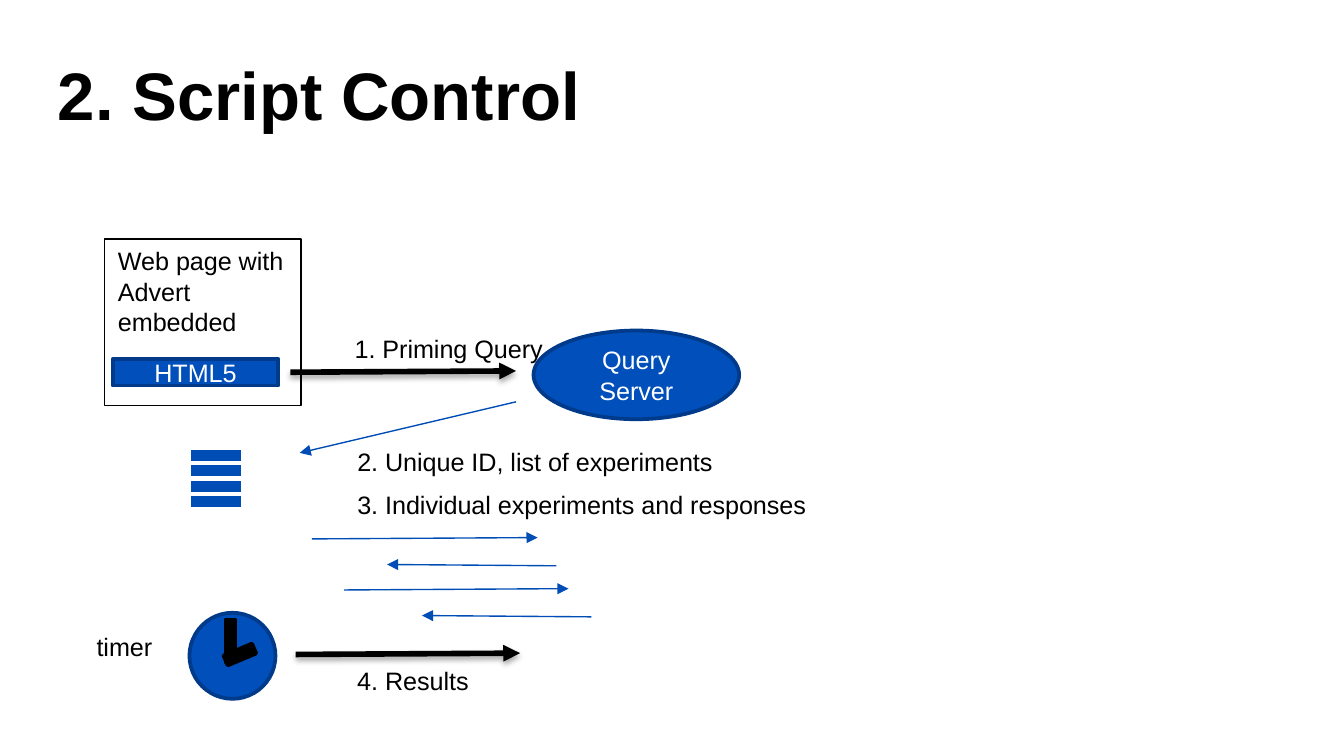
from lxml import etree
from pptx import Presentation
from pptx.dml.color import RGBColor
from pptx.enum.shapes import MSO_CONNECTOR, MSO_SHAPE
from pptx.enum.text import MSO_ANCHOR, MSO_AUTO_SIZE, PP_ALIGN
from pptx.oxml.ns import qn
from pptx.util import Inches, Pt

RECT, OVAL = MSO_SHAPE.RECTANGLE, MSO_SHAPE.OVAL
STRAIGHT = MSO_CONNECTOR.STRAIGHT
TOP, MIDDLE = MSO_ANCHOR.TOP, MSO_ANCHOR.MIDDLE
LEFT, CENTER = PP_ALIGN.LEFT, PP_ALIGN.CENTER
GROW = MSO_AUTO_SIZE.SHAPE_TO_FIT_TEXT
BLACK, WHITE, BLUE, NAVY, INK = "000000", "FFFFFF", "004FBA", "003A8A", "004DB6"


def color(code):
    return RGBColor.from_string(code)


def write(frame, lines, code=BLACK, size=13.5, bold=False, align=LEFT):
    for i, line in enumerate(lines):
        para = frame.add_paragraph() if i else frame.paragraphs[0]
        para.alignment = align
        run = para.add_run()
        run.text = line
        run.font.name = "Arial"
        run.font.size = Pt(size)
        run.font.bold = bold
        run.font.color.rgb = color(code)


deck = Presentation()
deck.slide_width = Inches(10)
deck.slide_height = Inches(10) * 9 // 16
slide = deck.slides.add_slide(deck.slide_layouts[6])
shapes = slide.shapes

title = shapes.add_textbox(Inches(0.43), Inches(0.23), Inches(9.13), Inches(0.94))
frame = title.text_frame
frame.word_wrap = True
frame.vertical_anchor = MIDDLE
frame.margin_left = frame.margin_right = frame.margin_top = frame.margin_bottom = 0
write(frame, ["2. Script Control"], size=36, bold=True)

nodes = [
    (RECT, 0.78, 1.78, 1.46, 1.24, None, BLACK, 0.75, 0, ["Web page with Advert embedded"]),
    (RECT, 0.84, 2.67, 1.23, 0.2, BLUE, NAVY, 2, 0, ["HTML5"]),
    (OVAL, 3.97, 2.46, 1.53, 0.66, BLUE, NAVY, 2, 0, ["Query", "Server"]),
    (OVAL, 1.41, 4.56, 0.64, 0.64, BLUE, NAVY, 2, 0, []),
    (RECT, 1.68, 4.61, 0.07, 0.32, BLACK, BLACK, 2, 0, []),
    (RECT, 1.67, 4.83, 0.23, 0.08, BLACK, BLACK, 2, 337.3, []),
]
for kind, x, y, w, h, fill, edge, width, turn, lines in nodes:
    node = shapes.add_shape(kind, Inches(x), Inches(y), Inches(w), Inches(h))
    node.shadow.inherit = False
    node.rotation = turn
    node.line.color.rgb = color(edge)
    node.line.width = Pt(width)
    node.text_frame.word_wrap = True
    if fill:
        node.fill.solid()
        node.fill.fore_color.rgb = color(fill)
        node.text_frame.vertical_anchor = MIDDLE
        write(node.text_frame, lines, WHITE, align=CENTER)
    else:
        node.fill.background()
        node.text_frame.vertical_anchor = TOP
        node.text_frame.auto_size = GROW
        write(node.text_frame, lines)

labels = [
    (2.54, 2.43, 1.62, "1. Priming Query"),
    (2.56, 3.27, 2.88, "2. Unique ID, list of experiments"),
    (2.56, 3.59, 3.59, "3. Individual experiments and responses"),
    (0.62, 4.65, 0.62, "timer"),
    (2.56, 4.9, 1.04, "4. Results"),
]
for x, y, w, text in labels:
    label = shapes.add_textbox(Inches(x), Inches(y), Inches(w), Inches(0.33))
    label.text_frame.word_wrap = False
    label.text_frame.auto_size = GROW
    write(label.text_frame, [text])

bars = shapes.add_group_shape().shapes
links = [
    (shapes, 2.16, 2.77, 3.84, 2.76, BLACK, 3),
    (shapes, 3.84, 2.99, 2.23, 3.37, INK, 0.75),
    (shapes, 2.32, 4.01, 4, 4, INK, 0.75),
    (shapes, 2.56, 4.39, 4.23, 4.38, INK, 0.75),
    (shapes, 4.14, 4.21, 2.88, 4.2, INK, 0.75),
    (shapes, 4.4, 4.59, 3.14, 4.58, INK, 0.75),
    (shapes, 2.2, 4.87, 3.87, 4.86, BLACK, 3),
]
links += [(bars, 1.42, y, 1.79, y, INK, 6) for y in (3.39, 3.5, 3.62, 3.73)]
for owner, x1, y1, x2, y2, code, width in links:
    link = owner.add_connector(STRAIGHT, Inches(x1), Inches(y1), Inches(x2), Inches(y2))
    link.line.color.rgb = color(code)
    link.line.width = Pt(width)
    if owner is shapes:
        etree.SubElement(link.line._get_or_add_ln(), qn("a:tailEnd"), type="triangle")
    effect = etree.SubElement(link._element.spPr, qn("a:effectLst"))
    if code == BLACK:
        shade = etree.SubElement(
            effect, qn("a:outerShdw"), blurRad=str(Pt(3.1)), dist=str(Pt(1.8)),
            dir="5400000", rotWithShape="0")
        tint = etree.SubElement(shade, qn("a:srgbClr"), val=BLACK)
        etree.SubElement(tint, qn("a:alpha"), val="35000")

deck.save("out.pptx")
